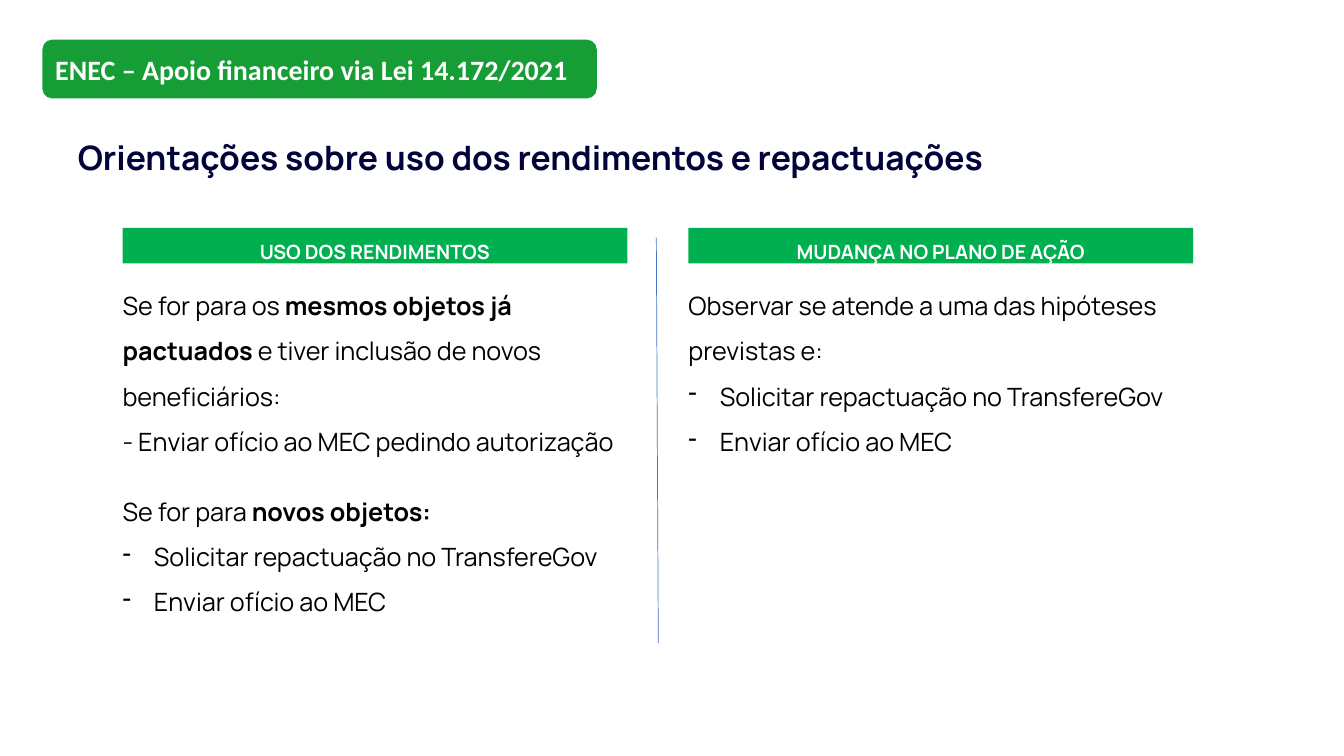
from lxml.etree import SubElement
from pptx import Presentation
from pptx.dml.color import RGBColor
from pptx.enum.shapes import MSO_CONNECTOR, MSO_SHAPE
from pptx.enum.text import MSO_ANCHOR, MSO_AUTO_SIZE, PP_ALIGN
from pptx.oxml.ns import qn
from pptx.util import Cm, Pt

NAVY = RGBColor(0x02, 0x03, 0x3B)
BLACK = RGBColor(0x00, 0x00, 0x00)
WHITE = RGBColor(0xFF, 0xFF, 0xFF)
BADGE_GREEN = RGBColor(0x16, 0x9D, 0x35)
HEADER_GREEN = RGBColor(0x00, 0xB0, 0x50)
DIVIDER_BLUE = RGBColor(0x44, 0x72, 0xC4)

COLUMN_LEFTS = (3.09, 17.35)
COLUMN_WIDTH = 12.72
HEADER_TOP = 5.74
BODY_TOP = 6.93
REQUEST_STEPS = ["Solicitar repactuação no TransfereGov", "Enviar ofício ao MEC"]


class SlideBuilder:
    """Holds the text style and the slide being filled."""

    font_name = "Manrope"
    line_spacing = 1.5
    bullet_indent = Cm(0.79)

    def __init__(self, slide):
        self.slide = slide

    def prepare_frame(self, shape, anchor=MSO_ANCHOR.TOP, margin=0):
        frame = shape.text_frame
        frame.word_wrap = True
        frame.auto_size = MSO_AUTO_SIZE.NONE
        frame.vertical_anchor = anchor
        if margin is not None:
            frame.margin_left = frame.margin_right = Cm(margin)
            frame.margin_top = frame.margin_bottom = Cm(margin)
        return frame

    def style(self, paragraph, size, color, bold=None, align=PP_ALIGN.LEFT,
              spacing=line_spacing, font_name=font_name):
        paragraph.alignment = align
        paragraph.line_spacing = spacing
        paragraph.space_before = Pt(0)
        paragraph.font.name = font_name
        paragraph.font.size = Pt(size)
        paragraph.font.color.rgb = color
        paragraph.font.bold = bold

    def title(self, text, left, top, width, height):
        shape = self.slide.shapes.title
        shape.left, shape.top = Cm(left), Cm(top)
        shape.width, shape.height = Cm(width), Cm(height)
        paragraph = self.prepare_frame(shape).paragraphs[0]
        paragraph.text = text
        self.style(paragraph, 24, NAVY, True, PP_ALIGN.JUSTIFY)

    def filled_shape(self, kind, fill, left, top, width, height):
        shape = self.slide.shapes.add_shape(
            kind, Cm(left), Cm(top), Cm(width), Cm(height))
        shape.shadow.inherit = False
        shape.fill.solid()
        shape.fill.fore_color.rgb = fill
        shape.line.fill.background()
        return shape

    def badge(self, text, left, top, width, height):
        shape = self.filled_shape(MSO_SHAPE.ROUNDED_RECTANGLE, BADGE_GREEN,
                                  left, top, width, height)
        paragraph = self.prepare_frame(shape, MSO_ANCHOR.MIDDLE, None).paragraphs[0]
        paragraph.text = text
        self.style(paragraph, 20, WHITE, True, spacing=1.0, font_name="Calibri")

    def column_header(self, text, left):
        shape = self.filled_shape(MSO_SHAPE.RECTANGLE, HEADER_GREEN,
                                  left, HEADER_TOP, COLUMN_WIDTH, 0.9)
        paragraph = self.prepare_frame(shape).paragraphs[0]
        paragraph.text = text
        self.style(paragraph, 14, WHITE, True, PP_ALIGN.CENTER)

    def body(self, left, top, height, lead, lines=(), bullets=()):
        """Lead is a list of (text, bold) runs; lines and bullets follow it."""
        box = self.slide.shapes.add_textbox(
            Cm(left), Cm(top), Cm(COLUMN_WIDTH), Cm(height))
        frame = self.prepare_frame(box)
        paragraph = frame.paragraphs[0]
        for text, bold in lead:
            run = paragraph.add_run()
            run.text = text
            if bold:
                run.font.bold = True
        self.style(paragraph, 18, BLACK)
        for text in lines:
            paragraph = frame.add_paragraph()
            paragraph.text = text
            self.style(paragraph, 18, BLACK)
        for text in bullets:
            paragraph = frame.add_paragraph()
            paragraph.text = text
            self.add_dash(paragraph)
            self.style(paragraph, 18, BLACK)

    def add_dash(self, paragraph):
        properties = paragraph._p.get_or_add_pPr()
        properties.set("marL", str(self.bullet_indent))
        properties.set("indent", str(-self.bullet_indent))
        SubElement(properties, qn("a:buFontTx"))
        SubElement(properties, qn("a:buChar")).set("char", "-")

    def divider(self, start_x, start_y, end_x, end_y):
        line = self.slide.shapes.add_connector(
            MSO_CONNECTOR.STRAIGHT, Cm(start_x), Cm(start_y), Cm(end_x), Cm(end_y))
        line.line.color.rgb = DIVIDER_BLUE
        line.line.width = Pt(0.5)
        SubElement(line._element.spPr, qn("a:effectLst"))


def main():
    presentation = Presentation()
    presentation.slide_width = Cm(33.87)
    presentation.slide_height = Cm(19.05)
    slide = presentation.slides.add_slide(presentation.slide_layouts[5])
    builder = SlideBuilder(slide)
    left_column, right_column = COLUMN_LEFTS

    # Title and topic badge
    builder.title("Orientações sobre uso dos rendimentos e repactuações",
                  1.96, 2.95, 27.23, 1.55)
    builder.badge("ENEC – Apoio financeiro via Lei 14.172/2021",
                  1.07, 1.0, 13.97, 1.48)

    # Column headers and divider
    headers = ("USO DOS RENDIMENTOS", "MUDANÇA NO PLANO DE AÇÃO")
    for text, left in zip(headers, COLUMN_LEFTS):
        builder.column_header(text, left)
    builder.divider(16.54, 5.99, 16.59, 16.2)

    # Left column: use of earnings
    builder.body(left_column, BODY_TOP, 4.6,
                 [("Se for para os ", False),
                  ("mesmos objetos já pactuados", True),
                  (" e tiver inclusão de novos beneficiários:", False)],
                 lines=["- Enviar ofício ao MEC pedindo autorização"])
    builder.body(left_column, 12.12, 3.45,
                 [("Se for para ", False), ("novos objetos:", True)],
                 bullets=REQUEST_STEPS)

    # Right column: change of action plan
    builder.body(right_column, BODY_TOP, 6.93,
                 [("Observar se atende a uma das hipóteses previstas e:", False)],
                 bullets=REQUEST_STEPS)

    presentation.save("out.pptx")


if __name__ == "__main__":
    main()
